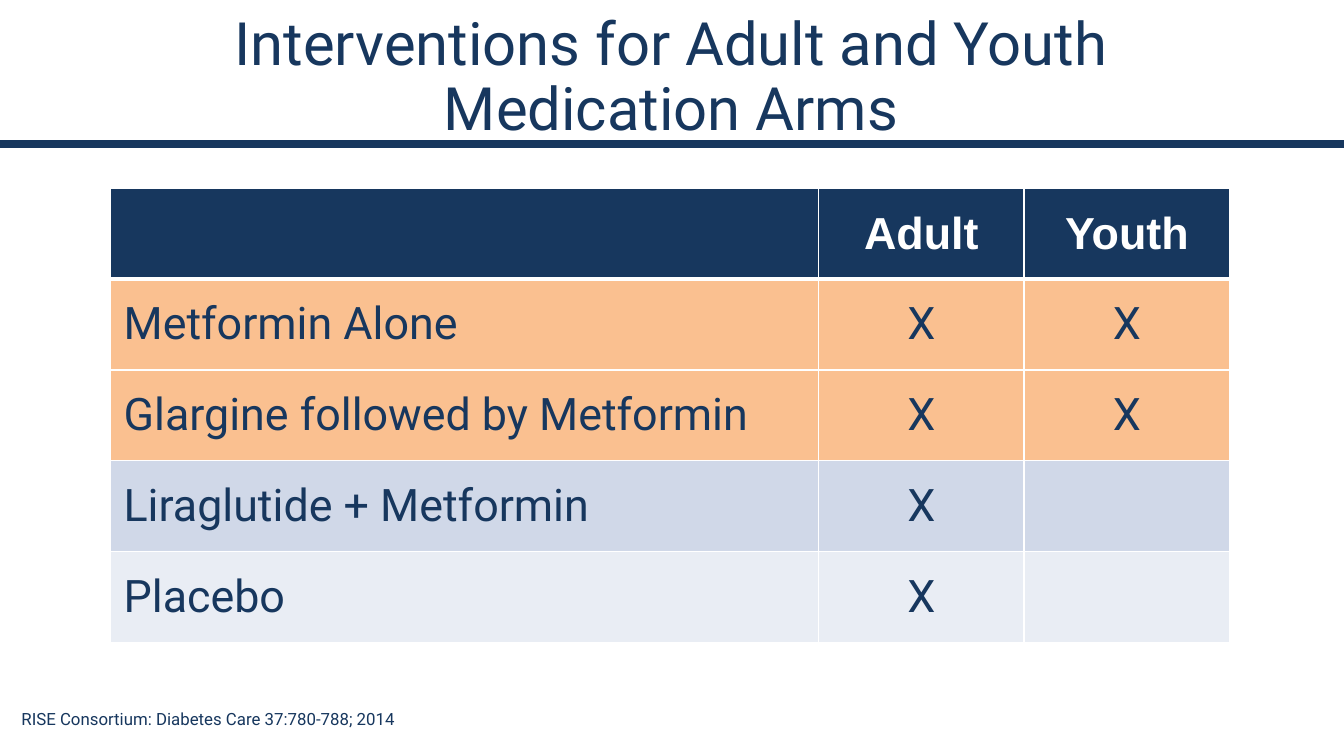
from dataclasses import dataclass

from lxml.etree import SubElement
from pptx import Presentation
from pptx.dml.color import RGBColor
from pptx.enum.shapes import MSO_CONNECTOR
from pptx.enum.text import MSO_ANCHOR, MSO_AUTO_SIZE, PP_ALIGN
from pptx.oxml import parse_xml
from pptx.oxml.ns import nsdecls, qn
from pptx.util import Inches, Pt


@dataclass(frozen=True)
class Theme:
    navy: str = "17375E"
    white: str = "FFFFFF"
    orange: str = "FAC090"
    blue: str = "D0D8E8"
    pale: str = "E9EDF4"
    body_font: str = "Roboto"
    header_font: str = "Arial"
    title_size: int = 32
    table_size: int = 24
    citation_size: int = 9


theme = Theme()


def add_text(paragraph, text, size, color=theme.navy, font=theme.body_font, bold=False):
    run = paragraph.add_run()
    run.text = text
    run.font.name = font
    run.font.size = Pt(size)
    run.font.bold = bold
    run.font.color.rgb = RGBColor.from_string(color)


def set_borders(cell, widths):
    properties = cell._tc.get_or_add_tcPr()
    for position, (side, width) in enumerate(widths.items()):
        border = parse_xml(
            f'<a:ln{side} {nsdecls("a")} w="{Pt(width)}"><a:solidFill>'
            f'<a:srgbClr val="{theme.white}"/></a:solidFill></a:ln{side}>'
        )
        properties.insert(position, border)


deck = Presentation()
deck.slide_width = Inches(10)
deck.slide_height = Inches(10 * 9 / 16)
slide = deck.slides.add_slide(deck.slide_layouts[5])

title = slide.shapes.title
title.left, title.top = Inches(0.64), Inches(0.06)
title.width, title.height = Inches(8.71), Inches(1.05)
citation = slide.shapes.add_textbox(Inches(0.08), Inches(5.23), Inches(3.04), Inches(0.24))
for box in (title, citation):
    frame = box.text_frame
    frame.auto_size = MSO_AUTO_SIZE.NONE
    frame.margin_left = frame.margin_right = Inches(0.08)
    frame.margin_top = frame.margin_bottom = Inches(0.04)

title.text_frame.word_wrap = True
title.text_frame.vertical_anchor = MSO_ANCHOR.MIDDLE
heading = title.text_frame.paragraphs[0]
heading.alignment = PP_ALIGN.CENTER
heading.line_spacing = 0.9
add_text(heading, "Interventions for Adult and Youth Medication Arms", theme.title_size)

citation.text_frame.word_wrap = False
add_text(
    citation.text_frame.paragraphs[0],
    "RISE Consortium: Diabetes Care 37:780-788; 2014",
    theme.citation_size,
)

title_rule = slide.shapes.add_connector(
    MSO_CONNECTOR.STRAIGHT, Inches(0), Inches(1.07), Inches(10.01), Inches(1.07)
)
title_rule.line.color.rgb = RGBColor.from_string(theme.navy)
title_rule.line.width = Pt(4.5)
SubElement(title_rule._element.spPr, qn("a:effectLst"))

arms = [
    (theme.navy, ("", "Adult", "Youth")),
    (theme.orange, ("Metformin Alone", "X", "X")),
    (theme.orange, ("Glargine followed by Metformin", "X", "X")),
    (theme.blue, ("Liraglutide + Metformin", "X", "")),
    (theme.pale, ("Placebo", "X", "")),
]
column_widths = (5.27, 1.53, 1.53)
table = slide.shapes.add_table(
    len(arms), len(column_widths), Inches(0.82), Inches(1.4), Inches(8.33), Inches(3.38)
).table
for column, width in zip(table.columns, column_widths):
    column.width = Inches(width)

for row, (fill, labels) in enumerate(arms):
    table.rows[row].height = Inches(3.38 / len(arms))
    is_header = row == 0
    for column, label in enumerate(labels):
        cell = table.cell(row, column)
        cell.fill.solid()
        cell.fill.fore_color.rgb = RGBColor.from_string(fill)
        set_borders(cell, {"L": 1, "R": 1, "T": 3 if row == 1 else 1, "B": 3 if is_header else 1})
        cell.vertical_anchor = MSO_ANCHOR.MIDDLE
        cell.margin_left = cell.margin_right = Inches(0.1)
        cell.margin_top = cell.margin_bottom = Inches(0.04)
        paragraph = cell.text_frame.paragraphs[0]
        paragraph.alignment = PP_ALIGN.CENTER if column else PP_ALIGN.LEFT
        if label and is_header:
            add_text(paragraph, label, theme.table_size, theme.white, theme.header_font, True)
        elif label:
            add_text(paragraph, label, theme.table_size)

deck.save("out.pptx")
